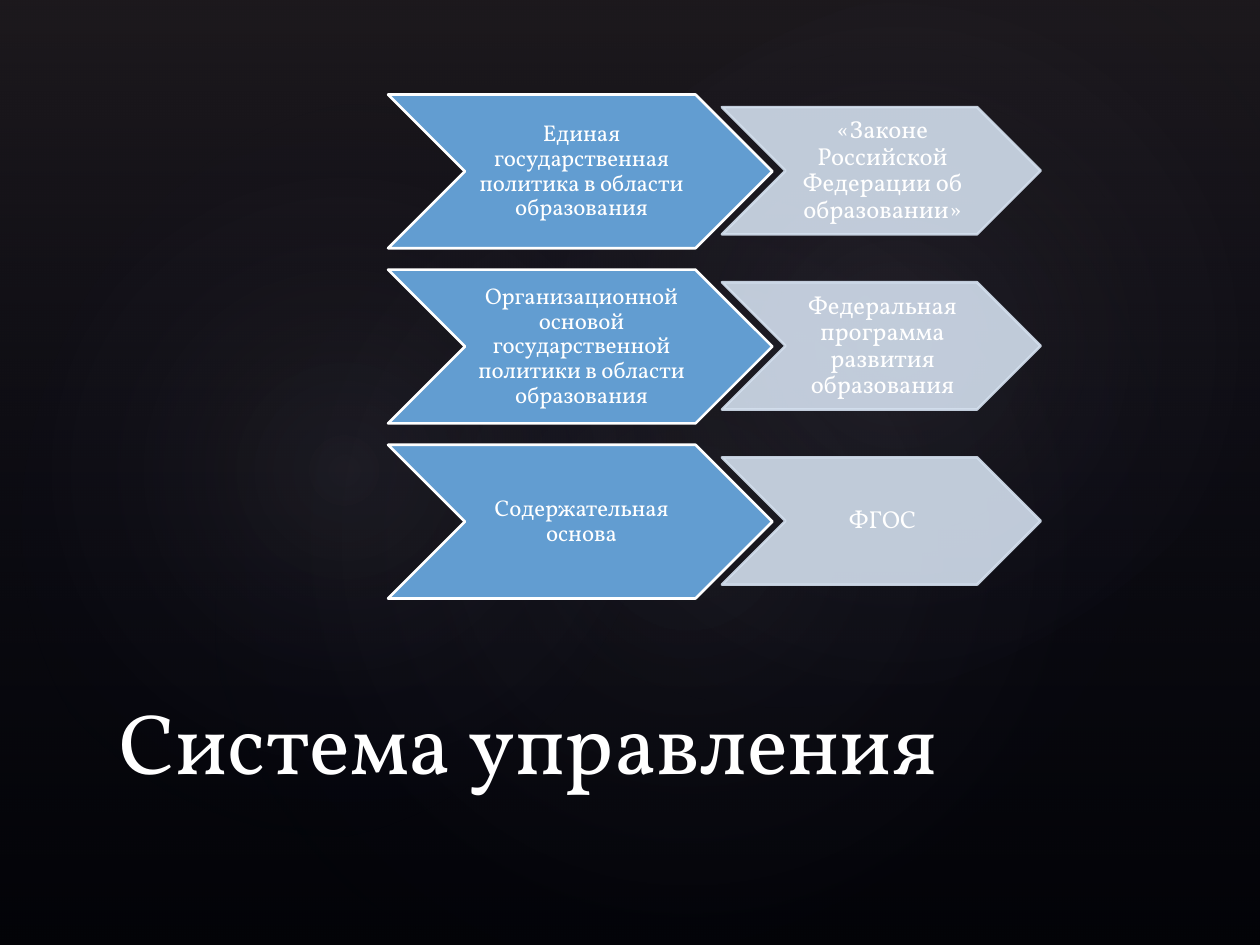
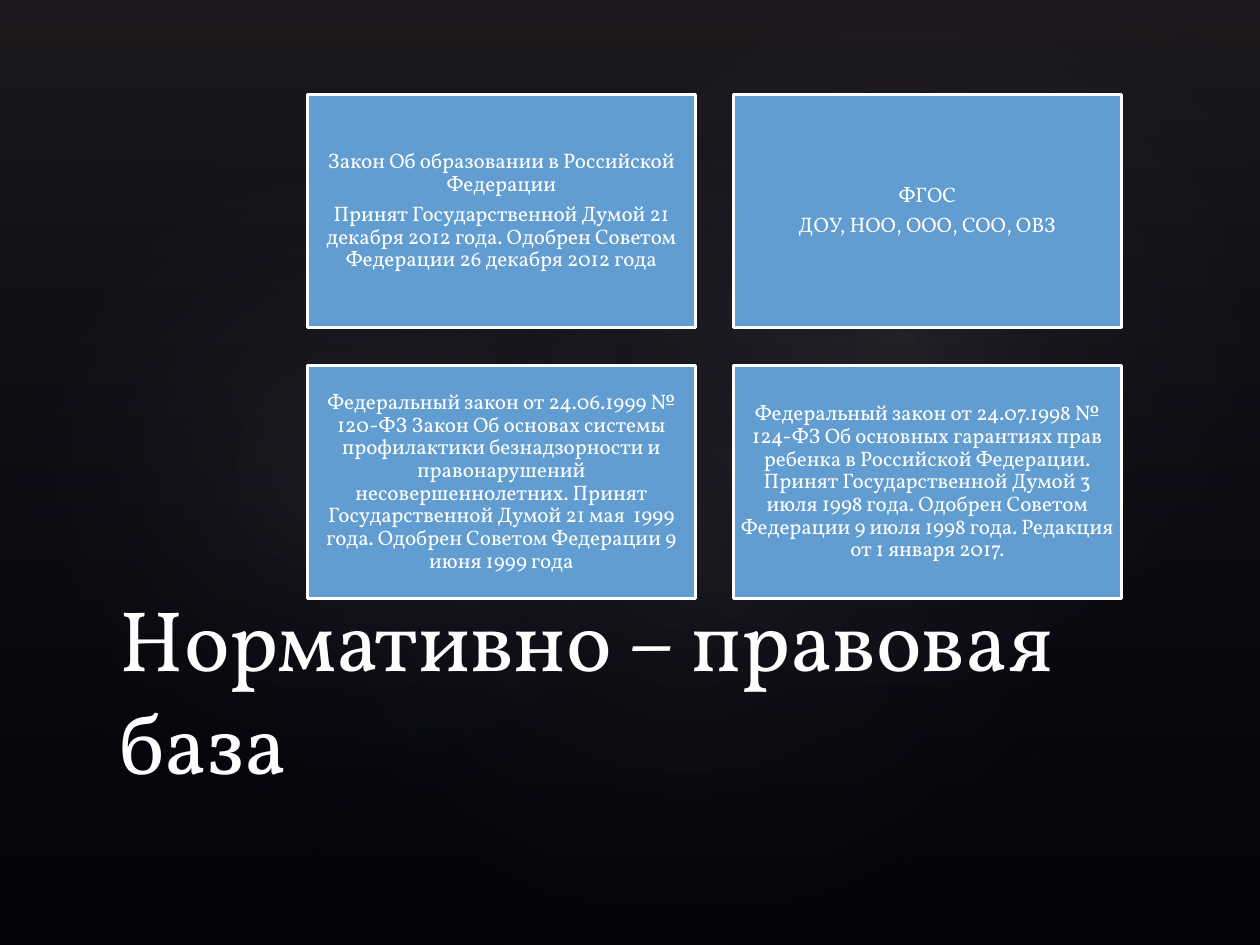
from dataclasses import dataclass

from pptx import Presentation
from pptx.dml.color import RGBColor
from pptx.enum.shapes import MSO_SHAPE
from pptx.enum.text import MSO_ANCHOR, MSO_AUTO_SIZE, PP_ALIGN
from pptx.oxml import parse_xml
from pptx.oxml.ns import nsdecls, qn
from pptx.shapes.autoshape import Shape
from pptx.slide import Slide, SlideLayout
from pptx.util import Inches, Pt

# Shared style
FONT = "Vollkorn"
BLACK = RGBColor(0x00, 0x00, 0x00)
WHITE = RGBColor(0xFF, 0xFF, 0xFF)
BLUE = RGBColor(0x62, 0x9D, 0xD1)
PALE_BLUE = RGBColor(0xD3, 0xDF, 0xEE)
HAZE = RGBColor(0x50, 0x46, 0x52)
GLOW = RGBColor(0xC4, 0xBC, 0xC6)
NAVY = RGBColor(0x24, 0x28, 0x52)
TITLE_ONLY = 5

LINEAR_DOWN = '<a:lin ang="5400000" scaled="0"/>'
FROM_CENTRE = ('<a:path path="circle"><a:fillToRect l="50000" t="50000" '
               'r="50000" b="50000"/></a:path>')


@dataclass(frozen=True)
class Box:
    left: float
    top: float
    width: float
    height: float


@dataclass(frozen=True)
class GradientStop:
    position: int
    color: RGBColor
    opacity: int


@dataclass(frozen=True)
class Glow:
    box: Box
    rotation: float
    opacity: int


@dataclass(frozen=True)
class CardStyle:
    geometry: MSO_SHAPE
    fill: RGBColor
    line: RGBColor
    font_size: int
    margins: tuple[float, float, float, float]  # left, top, right, bottom
    opacity: int = 100


GLOWS = (
    Glow(Box(1.5, 1.14, 7.92, 6.24), 328.7, 7),
    Glow(Box(-0.3, 1.28, 6.06, 4.9), 294.3, 8),
    Glow(Box(3.58, 0.13, 7.09, 5.2), 328.7, 8),
)

CHEVRON_MARGINS = (0.02, 0.01, 0, 0.01)
BASIS_STYLE = CardStyle(MSO_SHAPE.CHEVRON, BLUE, WHITE, 13, CHEVRON_MARGINS)
DOCUMENT_STYLE = CardStyle(MSO_SHAPE.CHEVRON, PALE_BLUE, PALE_BLUE, 14,
                           CHEVRON_MARGINS, 90)
LAW_STYLE = CardStyle(MSO_SHAPE.RECTANGLE, BLUE, WHITE, 12, (0.05,) * 4)

# Slide content
CONTENT_TOP = 0.75
MANAGEMENT_ROWS = (
    ("Единая государственная политика в области образования",
     "«Законе Российской Федерации об образовании»"),
    ("Организационной основой государственной политики в области образования",
     "Федеральная программа развития образования"),
    ("Содержательная основа", "ФГОС"),
)
LAWS = (
    "Закон Об образовании в Российской Федерации\n"
    "Принят Государственной Думой 21 декабря 2012 года. "
    "Одобрен Советом Федерации 26 декабря 2012 года",
    "ФГОС\nДОУ, НОО, ООО, СОО, ОВЗ",
    "Федеральный закон от 24.06.1999 № 120-ФЗ Закон Об основах системы "
    "профилактики безнадзорности и правонарушений несовершеннолетних. "
    "Принят Государственной Думой 21 мая  1999 года. "
    "Одобрен Советом Федерации 9 июня 1999 года",
    "Федеральный закон от 24.07.1998 № 124-ФЗ Об основных гарантиях прав "
    "ребенка в Российской Федерации. Принят Государственной Думой 3 июля "
    "1998 года. Одобрен Советом Федерации 9 июля 1998 года. "
    "Редакция от 1 января 2017.",
)


def add_plain_shape(slide: Slide, geometry: MSO_SHAPE, box: Box) -> Shape:
    shape = slide.shapes.add_shape(
        geometry, Inches(box.left), Inches(box.top),
        Inches(box.width), Inches(box.height))
    shape.shadow.inherit = False
    return shape


def set_gradient(shape: Shape, stops: tuple[GradientStop, ...],
                 direction: str) -> None:
    stops_xml = "".join(
        f'<a:gs pos="{stop.position * 1000}"><a:srgbClr val="{stop.color}">'
        f'<a:alpha val="{stop.opacity * 1000}"/></a:srgbClr></a:gs>'
        for stop in stops)
    gradient = parse_xml(
        f'<a:gradFill {nsdecls("a")} rotWithShape="1">'
        f"<a:gsLst>{stops_xml}</a:gsLst>{direction}</a:gradFill>")
    shape.fill.background()
    properties = shape.element.spPr
    properties.replace(properties.find(qn("a:noFill")), gradient)
    shape.line.fill.background()


def set_opacity(shape: Shape, percent: int) -> None:
    for color in shape.element.spPr.iter(qn("a:srgbClr")):
        color.append(parse_xml(
            f'<a:alpha {nsdecls("a")} val="{percent * 1000}"/>'))


def add_backdrop(layout: SlideLayout, slide: Slide) -> None:
    """Draw the haze and glows, then move them behind the layout's parts."""
    layout.background.fill.solid()
    layout.background.fill.fore_color.rgb = BLACK

    haze = add_plain_shape(slide, MSO_SHAPE.RECTANGLE, Box(0, 0, 10, 7.5))
    set_gradient(haze, (GradientStop(0, HAZE, 36),
                        GradientStop(100, NAVY, 10)), LINEAR_DOWN)
    backdrop = [haze]
    for glow in GLOWS:
        ellipse = add_plain_shape(slide, MSO_SHAPE.OVAL, glow.box)
        ellipse.rotation = glow.rotation
        set_gradient(ellipse, (GradientStop(0, GLOW, glow.opacity),
                               GradientStop(58, NAVY, 0)), FROM_CENTRE)
        backdrop.append(ellipse)

    for index, shape in enumerate(backdrop):
        shape.element.nvSpPr.cNvPr.set("id", str(100 + index))
        layout.shapes.element.insert(2 + index, shape.element)


def format_title(slide: Slide, text: str) -> None:
    title = slide.shapes.title
    title.left, title.top = Inches(0.85), Inches(5.33)
    title.width, title.height = Inches(8.25), Inches(1)
    text_frame = title.text_frame
    text_frame.text = text
    text_frame.word_wrap = True
    text_frame.auto_size = MSO_AUTO_SIZE.NONE
    text_frame.vertical_anchor = MSO_ANCHOR.BOTTOM
    paragraph = text_frame.paragraphs[0]
    paragraph.alignment = PP_ALIGN.LEFT
    font = paragraph.runs[0].font
    font.name, font.size, font.color.rgb = FONT, Pt(49), WHITE
    # Bring the title in front of the cards
    slide.shapes.element.append(title.element)


def add_card(slide: Slide, box: Box, text: str, style: CardStyle) -> None:
    card = add_plain_shape(slide, style.geometry, box)
    card.fill.solid()
    card.fill.fore_color.rgb = style.fill
    card.line.color.rgb = style.line
    card.line.width = Pt(1.5)
    if style.opacity < 100:
        set_opacity(card, style.opacity)

    text_frame = card.text_frame
    text_frame.text = text
    text_frame.word_wrap = True
    text_frame.vertical_anchor = MSO_ANCHOR.MIDDLE
    (text_frame.margin_left, text_frame.margin_top, text_frame.margin_right,
     text_frame.margin_bottom) = map(Inches, style.margins)
    for paragraph in text_frame.paragraphs:
        paragraph.alignment = PP_ALIGN.CENTER
        paragraph.line_spacing = 0.9
        paragraph.space_after = Pt(0.35 * style.font_size)
        for run in paragraph.runs:
            run.font.name = FONT
            run.font.size = Pt(style.font_size)
            run.font.color.rgb = WHITE


def build_management_slide(slide: Slide) -> None:
    row_pitch = 1.39
    for row, (basis, document) in enumerate(MANAGEMENT_ROWS):
        top = CONTENT_TOP + row * row_pitch
        add_card(slide, Box(3.08, top, 3.05, 1.22), basis, BASIS_STYLE)
        add_card(slide, Box(5.73, top + 0.1, 2.53, 1.01), document,
                 DOCUMENT_STYLE)
    format_title(slide, "Система управления")


def build_law_slide(slide: Slide) -> None:
    width, height, gap = 3.08, 1.85, 0.3
    for index, law in enumerate(LAWS):
        row, column = divmod(index, 2)
        box = Box(2.44 + column * (width + gap),
                  CONTENT_TOP + row * (height + gap), width, height)
        add_card(slide, box, law, LAW_STYLE)
    format_title(slide, "Нормативно – правовая база")


def main() -> None:
    presentation = Presentation()
    presentation.slide_width = Inches(10)
    presentation.slide_height = Inches(7.5)
    layout = presentation.slide_layouts[TITLE_ONLY]

    management_slide = presentation.slides.add_slide(layout)
    add_backdrop(layout, management_slide)
    build_management_slide(management_slide)
    build_law_slide(presentation.slides.add_slide(layout))

    presentation.save("out.pptx")


if __name__ == "__main__":
    main()
